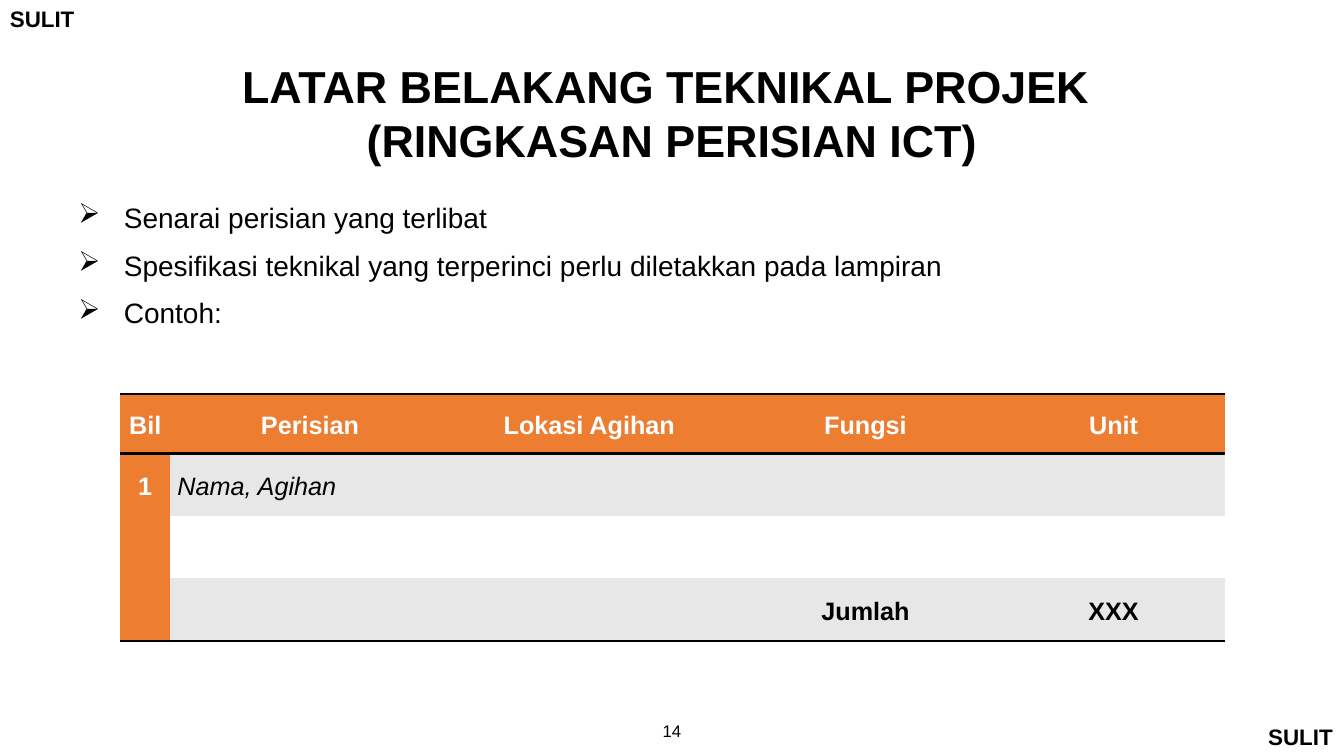
from lxml import etree
from pptx import Presentation
from pptx.dml.color import RGBColor
from pptx.enum.text import MSO_ANCHOR, MSO_AUTO_SIZE, PP_ALIGN
from pptx.oxml.ns import qn
from pptx.util import Inches, Pt

BLACK = RGBColor(0, 0, 0)
WHITE = RGBColor(255, 255, 255)
ORANGE = RGBColor(0xED, 0x7D, 0x31)
GREY = RGBColor(0xE7, 0xE7, 0xE7)


def write(tf, lines, size, color=BLACK, bold=False, italic=False,
          align=PP_ALIGN.LEFT, before=0, spacing=None, bullet=None):
    for i, line in enumerate(lines):
        p = tf.paragraphs[0] if i == 0 else tf.add_paragraph()
        p.alignment = align
        p.space_before = Pt(before)
        if spacing:
            p.line_spacing = spacing
        if bullet:
            pPr = p._p.get_or_add_pPr()
            pPr.set("marL", str(Inches(0.57)))
            pPr.set("indent", str(Inches(-0.45)))
            etree.SubElement(pPr, qn("a:buChar"), char=bullet)
        r = p.add_run()
        r.text = line
        r.font.name = "Arial"
        r.font.size = Pt(size)
        r.font.bold = bold
        r.font.italic = italic
        r.font.color.rgb = color


def add_box(x, y, w, h, lines, size, wrap=True, margins=(0.1, 0.05), **fmt):
    tf = s.shapes.add_textbox(Inches(x), Inches(y), Inches(w), Inches(h)).text_frame
    tf.word_wrap = wrap
    tf.auto_size = MSO_AUTO_SIZE.NONE if wrap else MSO_AUTO_SIZE.SHAPE_TO_FIT_TEXT
    tf.margin_left = tf.margin_right = Inches(margins[0])
    tf.margin_top = tf.margin_bottom = Inches(margins[1])
    write(tf, lines, size, **fmt)


prs = Presentation()
prs.slide_width = Inches(13.33)
prs.slide_height = Inches(7.5)
s = prs.slides.add_slide(prs.slide_layouts[6])

for x, y in [(0, 0), (12.48, 7.13)]:
    add_box(x, y, 0.85, 0.37, ["SULIT"], 16, wrap=False, bold=True)

add_box(2.29, 0.54, 8.75, 1.15,
        ["LATAR BELAKANG TEKNIKAL PROJEK ", "(RINGKASAN PERISIAN ICT)"],
        32, wrap=False, margins=(0.07, 0.04), bold=True, align=PP_ALIGN.CENTER)

rows = [
    ["Bil", "Perisian", "Lokasi Agihan", "Fungsi", "Unit"],
    ["1", "Nama, Agihan", "", "", ""],
    ["", "", "", "", ""],
    ["", "", "", "Jumlah", "XXX"],
]
table = s.shapes.add_table(4, 5, Inches(1.19), Inches(3.91), Inches(10.95), Inches(2.44)).table
table.first_row = table.horz_banding = False
for col, width in zip(table.columns, [0.5, 2.77, 2.77, 2.71, 2.21]):
    col.width = Inches(width)
for row, height in zip(table.rows, [0.59, 0.62, 0.62, 0.62]):
    row.height = Inches(height)

for i, row in enumerate(rows):
    for j, text in enumerate(row):
        cell = table.cell(i, j)
        cell.vertical_anchor = MSO_ANCHOR.MIDDLE
        cell.margin_left = cell.margin_right = Inches(0.07)
        cell.margin_top = cell.margin_bottom = 0
        ruled = {"lnT": i in (0, 1), "lnB": i in (0, 3)}
        for side in ("lnL", "lnR", "lnT", "lnB"):
            ln = etree.SubElement(cell._tc.get_or_add_tcPr(), qn("a:" + side), w=str(Pt(2)))
            if ruled.get(side):
                fill = etree.SubElement(ln, qn("a:solidFill"))
                etree.SubElement(fill, qn("a:srgbClr"), val=str(BLACK))
            else:
                etree.SubElement(ln, qn("a:noFill"))
        heading = i == 0 or j == 0
        cell.fill.solid()
        cell.fill.fore_color.rgb = ORANGE if heading else GREY if i % 2 else WHITE
        if text:
            sample = (i, j) == (1, 1)
            write(cell.text_frame, [text], 18, color=WHITE if heading else BLACK,
                  bold=not sample, italic=sample, before=3, spacing=1.15,
                  align=PP_ALIGN.LEFT if sample else PP_ALIGN.CENTER)

add_box(0.56, 1.94, 11.97, 2.36,
        ["Senarai perisian yang terlibat",
         "Spesifikasi teknikal yang terperinci perlu diletakkan pada lampiran",
         "Contoh:"],
        20, align=PP_ALIGN.JUSTIFY, before=10, bullet="\u27a2")

add_box(6.4, 7.1, 0.53, 0.4, ["14"], 12, align=PP_ALIGN.CENTER)

prs.save("out.pptx")
